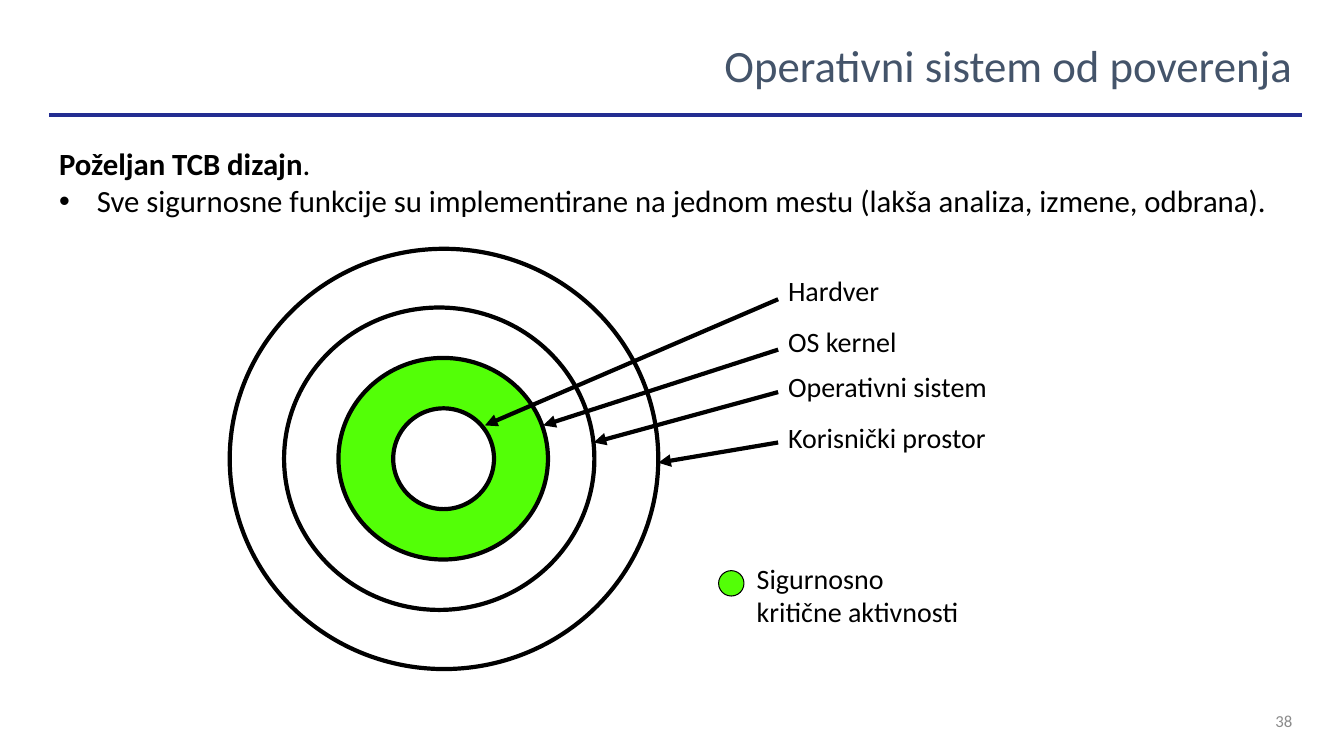
from dataclasses import dataclass

from lxml.etree import SubElement
from pptx import Presentation
from pptx.dml.color import RGBColor
from pptx.enum.shapes import MSO_CONNECTOR, MSO_SHAPE
from pptx.enum.text import MSO_ANCHOR, PP_ALIGN
from pptx.oxml.ns import qn
from pptx.util import Cm, Pt

FONT = "Calibri"
BLACK, WHITE, GREEN = "000000", "FFFFFF", "53FF07"
SLATE, NAVY, GREY = "44546A", "232D91", "8B8B8B"
MARGIN, CONTENT_WIDTH = 1.24, 31.58
LABEL_LEFT = 19.61


@dataclass
class Circle:
    left: float
    top: float
    width: float
    height: float
    fill: str | None = None
    weight: float = 3


@dataclass
class Layer:
    name: str
    label_top: float
    arrow_top: float
    tip_x: float
    tip_y: float


# Back to front, lengths in centimetres
CIRCLES = [
    Circle(18.11, 14.38, 0.64, 0.64, GREEN, 0.75),
    Circle(8.53, 9.02, 5.28, 5.08, GREEN),
    Circle(7.16, 7.75, 7.82, 7.62),
    Circle(5.79, 6.27, 10.8, 10.59),
    Circle(9.91, 10.29, 2.54, 2.54, WHITE),
]
LAYERS = [
    Layer("Hardver", 6.76, 7.54, 12.22, 10.72),
    Layer("OS kernel", 8.05, 8.81, 13.69, 10.72),
    Layer("Operativni sistem", 9.19, 9.88, 14.96, 11.15),
    Layer("Korisnički prostor", 10.46, 11.15, 16.59, 11.66),
]


def color(value: str) -> RGBColor:
    return RGBColor.from_string(value)


def add_text(page, text: str, left: float, top: float, width: float, height: float,
             size: float, ink: str = BLACK, wrap: bool = True,
             align=PP_ALIGN.LEFT, anchor=MSO_ANCHOR.TOP):
    box = page.shapes.add_textbox(Cm(left), Cm(top), Cm(width), Cm(height))
    frame = box.text_frame
    frame.text = text
    frame.word_wrap = wrap
    frame.vertical_anchor = anchor
    for para in frame.paragraphs:
        para.alignment = align
        for span in para.runs:
            span.font.name = FONT
            span.font.size = Pt(size)
            span.font.color.rgb = color(ink)
    return frame


def add_circle(page, circle: Circle) -> None:
    shape = page.shapes.add_shape(MSO_SHAPE.OVAL, Cm(circle.left), Cm(circle.top),
                                  Cm(circle.width), Cm(circle.height))
    shape.shadow.inherit = False
    if circle.fill:
        shape.fill.solid()
        shape.fill.fore_color.rgb = color(circle.fill)
    else:
        shape.fill.background()
    shape.line.color.rgb = color(BLACK)
    shape.line.width = Pt(circle.weight)


def add_line(page, x1: float, y1: float, x2: float, y2: float,
             ink: str, arrow: bool = False) -> None:
    line = page.shapes.add_connector(MSO_CONNECTOR.STRAIGHT,
                                     Cm(x1), Cm(y1), Cm(x2), Cm(y2))
    line.line.color.rgb = color(ink)
    line.line.width = Pt(3)
    properties = line._element.spPr
    if arrow:
        SubElement(properties.find(qn("a:ln")), qn("a:tailEnd"), type="triangle")
    SubElement(properties, qn("a:effectLst"))


def add_bullet(para, indent: float) -> None:
    properties = para._p.get_or_add_pPr()
    properties.set("marL", str(Cm(indent)))
    properties.set("indent", str(-Cm(indent)))
    SubElement(properties, qn("a:buFont"), typeface="Arial")
    SubElement(properties, qn("a:buChar"), char="•")


def main() -> None:
    deck = Presentation()
    deck.slide_width, deck.slide_height = Cm(33.87), Cm(19.05)
    page = deck.slides.add_slide(deck.slide_layouts[6])

    # Title, rule and page number
    add_text(page, "Operativni sistem od poverenja", MARGIN, 0.71, CONTENT_WIDTH, 1.83,
             32, SLATE, align=PP_ALIGN.RIGHT, anchor=MSO_ANCHOR.MIDDLE)
    add_text(page, "38", 31.34, 17.65, 1.48, 1.02, 12, GREY,
             align=PP_ALIGN.RIGHT, anchor=MSO_ANCHOR.MIDDLE)
    add_line(page, MARGIN, 2.9, MARGIN + CONTENT_WIDTH, 2.9, NAVY)

    # Body text
    body = add_text(page, "Poželjan TCB dizajn\nSve sigurnosne funkcije su implementirane "
                    "na jednom mestu (lakša analiza, izmene, odbrana).",
                    MARGIN, 3.53, CONTENT_WIDTH, 13.49, 22)
    heading, point = body.paragraphs
    heading.runs[0].font.bold = True
    stop = heading.add_run()
    stop.text = "."
    stop.font.name = FONT
    stop.font.size = Pt(22)
    stop.font.color.rgb = color(BLACK)
    add_bullet(point, 0.95)

    # Rings and legend
    for circle in CIRCLES:
        add_circle(page, circle)
    add_text(page, "Sigurnosno\nkritične aktivnosti", 18.82, 14.02, 5.66, 1.96,
             20, wrap=False)

    # Layer labels with arrows
    for layer in LAYERS:
        add_text(page, layer.name, LABEL_LEFT, layer.label_top, 5.6, 1.12, 20, wrap=False)
        add_line(page, LABEL_LEFT, layer.arrow_top, layer.tip_x, layer.tip_y,
                 BLACK, arrow=True)

    deck.save("out.pptx")


if __name__ == "__main__":
    main()
